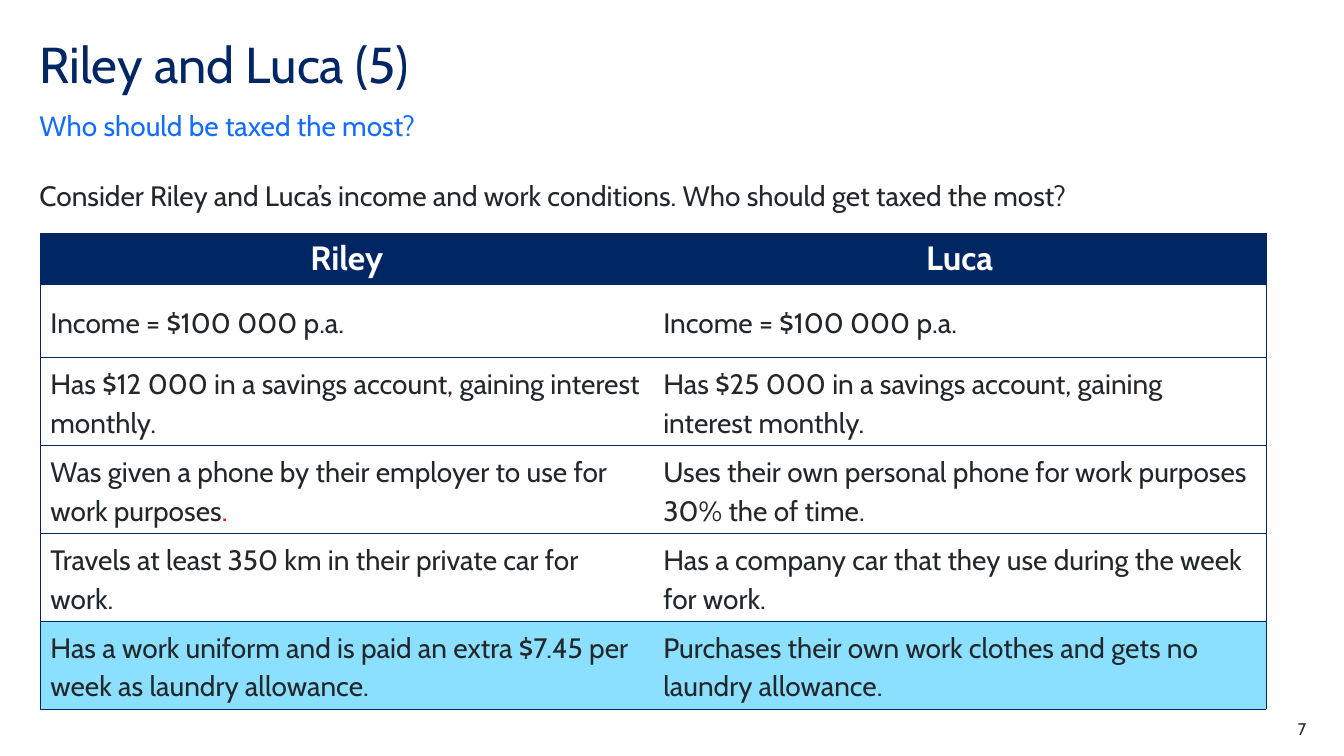
"""Build the slide that compares Riley's and Luca's income and work conditions."""
from dataclasses import dataclass

from lxml.etree import SubElement
from pptx import Presentation
from pptx.dml.color import RGBColor
from pptx.enum.text import MSO_ANCHOR, MSO_AUTO_SIZE, PP_ALIGN
from pptx.oxml.ns import qn
from pptx.util import Pt


@dataclass(frozen=True)
class Theme:
    font: str = "Cabin"
    navy: str = "002664"
    blue: str = "146CFD"
    sky: str = "8CE0FF"
    ink: str = "22272B"
    red: str = "FF0000"
    white: str = "FFFFFF"
    title: float = 36
    header: float = 24
    body: float = 20
    small: float = 12
    border: float = 0.5


@dataclass(frozen=True)
class TextItem:
    text: str
    left: float
    top: float
    width: float
    height: float
    size: float
    color: str
    anchor: MSO_ANCHOR = MSO_ANCHOR.TOP
    align: PP_ALIGN = PP_ALIGN.LEFT
    spacing: float = 1.0
    after: float = 0


@dataclass(frozen=True)
class Condition:
    riley: str
    luca: str
    riley_end: str = ""
    fill: str = ""


THEME = Theme()
LEFT = 28.2
TITLE = TextItem("Riley and Luca (5)", LEFT, 28.2, 793.5, 43.2,
                 THEME.title, THEME.navy, spacing=0.9)
BODIES = (
    TextItem("Who should be taxed the most?", LEFT, 77, 793.5, 24.5,
             THEME.body, THEME.blue, MSO_ANCHOR.BOTTOM, after=12),
    TextItem("Consider Riley and Luca’s income and work conditions. "
             "Who should get taxed the most?", LEFT, 127.4, 904.3, 77.8,
             THEME.body, THEME.ink, after=12),
)
PAGE_NUMBER = TextItem("7", 876.2, 513.4, 56.9, 14.4, THEME.small, THEME.ink,
                       align=PP_ALIGN.RIGHT)
HEADER = Condition("Riley", "Luca", fill=THEME.navy)
CONDITIONS = (
    Condition("Income = $100 000 p.a.", "Income = $100 000 p.a."),
    Condition("Has $12 000 in a savings account, gaining interest monthly.",
              "Has $25 000 in a savings account, gaining interest monthly."),
    Condition("Was given a phone by their employer to use for work purposes",
              "Uses their own personal phone for work purposes 30% the of time.",
              riley_end="."),
    Condition("Travels at least 350 km in their private car for work.",
              "Has a company car that they use during the week for work."),
    Condition("Has a work uniform and is paid an extra $7.45 per week as laundry allowance.",
              "Purchases their own work clothes and gets no laundry allowance.",
              fill=THEME.sky),
)


def style_run(r, size: float, color: str, bold: bool = False) -> None:
    r.font.name = THEME.font
    r.font.size = Pt(size)
    r.font.bold = bold
    r.font.color.rgb = RGBColor.from_string(color)


def fill_text(sp, item: TextItem) -> None:
    sp.left, sp.top = Pt(item.left), Pt(item.top)
    sp.width, sp.height = Pt(item.width), Pt(item.height)
    tf = sp.text_frame
    tf.text = item.text
    tf.word_wrap = True
    tf.auto_size = MSO_AUTO_SIZE.NONE
    tf.vertical_anchor = item.anchor
    tf.margin_left = tf.margin_top = tf.margin_right = tf.margin_bottom = Pt(0)
    p = tf.paragraphs[0]
    pPr = p._p.get_or_add_pPr()
    pPr.set("marL", "0")
    pPr.set("indent", "0")
    SubElement(pPr, qn("a:buNone"))
    p.alignment = item.align
    p.line_spacing = item.spacing
    p.space_before, p.space_after = Pt(0), Pt(item.after)
    style_run(p.runs[0], item.size, item.color)


def set_borders(cell, col: int) -> None:
    tcPr = cell._tc.get_or_add_tcPr()
    sides = {"lnL": col == 0, "lnR": col == 1, "lnT": True, "lnB": True}
    for side, visible in sides.items():
        ln = SubElement(tcPr, qn(f"a:{side}"), w=str(Pt(THEME.border)))
        if visible:
            line_fill = SubElement(ln, qn("a:solidFill"))
            SubElement(line_fill, qn("a:srgbClr"), val=THEME.navy)
        else:
            SubElement(ln, qn("a:noFill"))


def fill_cell(cell, col: int, row: Condition, is_header: bool) -> None:
    set_borders(cell, col)
    if row.fill:
        cell.fill.solid()
        cell.fill.fore_color.rgb = RGBColor.from_string(row.fill)
    else:
        cell.fill.background()
    p = cell.text_frame.paragraphs[0]
    p.text = (row.riley, row.luca)[col]
    if is_header:
        p.alignment = PP_ALIGN.CENTER
        style_run(p.runs[0], THEME.header, THEME.white, bold=True)
        return
    cell.vertical_anchor = MSO_ANCHOR.MIDDLE
    p.line_spacing = 1.14
    style_run(p.runs[0], THEME.body, THEME.ink)
    if col == 0 and row.riley_end:
        r = p.add_run()
        r.text = row.riley_end
        style_run(r, THEME.body, THEME.red)


def add_comparison(shapes) -> None:
    rows = (HEADER, *CONDITIONS)
    table = shapes.add_table(len(rows), 2, Pt(28.8), Pt(166.5),
                             Pt(875.6), Pt(296)).table
    table.first_row = table.horz_banding = False
    for i, row in enumerate(rows):
        table.rows[i].height = Pt(52.4 if i else 33.1)
        for col in range(2):
            fill_cell(table.cell(i, col), col, row, is_header=i == 0)


def main() -> None:
    prs = Presentation()
    prs.slide_width, prs.slide_height = Pt(960), Pt(540)
    s = prs.slides.add_slide(prs.slide_layouts.get_by_name("Two Content"))
    fill_text(s.shapes.title, TITLE)
    for idx, item in enumerate(BODIES, start=1):
        fill_text(s.placeholders[idx], item)
    add_comparison(s.shapes)
    fill_text(s.shapes.add_textbox(0, 0, 0, 0), PAGE_NUMBER)
    prs.save("out.pptx")


if __name__ == "__main__":
    main()
